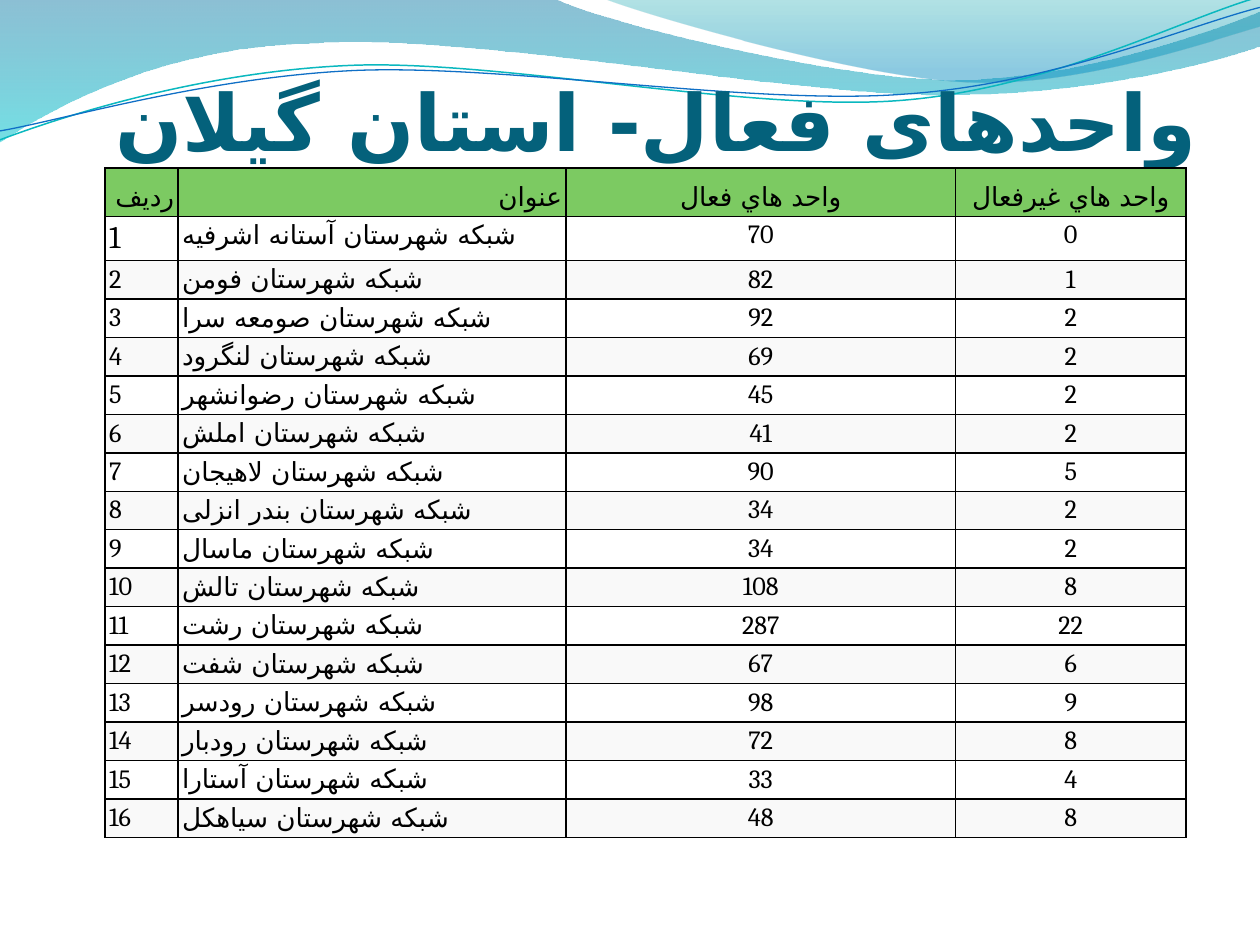
from dataclasses import dataclass

from lxml.etree import SubElement
from pptx import Presentation
from pptx.dml.color import RGBColor
from pptx.enum.text import MSO_ANCHOR, MSO_AUTO_SIZE, PP_ALIGN
from pptx.oxml.ns import qn
from pptx.util import Cm, Pt


@dataclass(frozen=True)
class Theme:
    title_font: str = "Calibri"
    table_font: str = "Cambria"
    persian_font: str = "DejaVu Sans"
    title_size: float = 45
    table_size: float = 15
    first_number_size: float = 18
    border_width: float = 1
    title: str = "04617B"
    text: str = "000000"
    header: str = "7CCA62"
    bands: tuple = ("FFFFFF", "F9F9F9")


THEME = Theme()
TITLE = "واحدهای فعال- استان گیلان"
HEADERS = ["ردیف", "عنوان", "واحد هاي فعال", "واحد هاي غيرفعال"]
NETWORK = "شبکه شهرستان"
COUNTIES = [
    ("آستانه اشرفیه", 70, 0),
    ("فومن", 82, 1),
    ("صومعه سرا", 92, 2),
    ("لنگرود", 69, 2),
    ("رضوانشهر", 45, 2),
    ("املش", 41, 2),
    ("لاهیجان", 90, 5),
    ("بندر انزلی", 34, 2),
    ("ماسال", 34, 2),
    ("تالش", 108, 8),
    ("رشت", 287, 22),
    ("شفت", 67, 6),
    ("رودسر", 98, 9),
    ("رودبار", 72, 8),
    ("آستارا", 33, 4),
    ("سیاهکل", 48, 8),
]
COLUMN_WIDTHS = [1.47, 7.82, 7.85, 4.65]
HEADER_HEIGHT, FIRST_HEIGHT, ROW_HEIGHT = 0.97, 0.88, 0.76
HEADER_ALIGN = [PP_ALIGN.RIGHT, PP_ALIGN.RIGHT, PP_ALIGN.CENTER, PP_ALIGN.CENTER]
BODY_ALIGN = [PP_ALIGN.LEFT, PP_ALIGN.LEFT, PP_ALIGN.CENTER, PP_ALIGN.CENTER]

WAVES = [
    ([(0, 0), (11.18, -0.03), (12.09, 0.43, 16.87, 1.6, 19.25, 1.6),
      (21.67, 1.6, 24.33, 0.66, 25.4, 0.23), (25.43, 0.91),
      (24.97, 1.12, 22.1, 1.93, 18.95, 1.91), (15.8, 1.91, 9.7, 0.71, 6.53, 0.86),
      (3.28, 0.91, 1.17, 2.11, -0.03, 2.87)],
     [(0, "0074A1", 45), (1, "00C6CF", 55)]),
    ([(12.17, -0.03), (12.93, 0.28, 17.32, 1.57, 19.53, 1.65),
      (21.74, 1.75, 24.41, 0.81, 25.4, 0.53), (25.4, 0)],
     [(0, "00A1A9", 30), (0.8, "008BBF", 45)]),
]
RIBBONS = [
    ([(0, 2.82), (1.22, 2.36, 4.01, 1.45, 7.04, 1.32),
      (10.03, 1.19, 15.06, 2.26, 18.11, 2.03), (21.16, 1.8, 23.83, 0.38, 25.35, -0.05)],
     "0AB8BF", 0.85),
    ([(0, 2.64), (1.19, 2.44, 4.17, 1.55, 7.19, 1.42),
      (10.24, 1.3, 15.16, 2.13, 18.21, 1.9), (21.23, 1.7, 23.9, 0.53, 25.4, 0.15)],
     "0F6FC6", 0.75),
]


def color(value):
    return RGBColor.from_string(value)


def draw_outline(page, segments, close):
    points = [(Cm(x), Cm(y)) for segment in segments
              for x, y in zip(segment[::2], segment[1::2])]
    builder = page.shapes.build_freeform(*points[0])
    builder.add_line_segments(points[1:], close=close)
    shape = builder.convert_to_shape()
    shape.shadow.inherit = False
    corners = iter(list(shape._element.iter(qn("a:lnTo"))))
    for segment in segments[1:]:
        corner = next(corners)
        if len(segment) == 6:
            corner.tag = qn("a:cubicBezTo")
            for extra in (next(corners), next(corners)):
                corner.append(extra[0])
                extra.getparent().remove(extra)
    return shape


def draw_wave(page, segments, stops):
    shape = draw_outline(page, segments, True)
    shape.line.fill.background()
    shape.fill.gradient()
    shape.fill.gradient_angle = 270
    for stop, (position, value, opacity) in zip(shape.fill.gradient_stops, stops):
        stop.position = position
        stop.color.rgb = color(value)
    for element, (position, value, opacity) in zip(shape._element.iter(qn("a:gs")), stops):
        SubElement(element[0], qn("a:alpha"), val=str(opacity * 1000))


def draw_ribbon(page, segments, value, width):
    shape = draw_outline(page, segments, False)
    shape.fill.background()
    shape.line.color.rgb = color(value)
    shape.line.width = Pt(width)


def format_paragraph(para, alignment, font, size, value):
    para.alignment = alignment
    para.font.name = font
    para.font.size = Pt(size)
    para.font.color.rgb = color(value)
    for span in para.runs:
        SubElement(span._r.get_or_add_rPr(), qn("a:cs"), typeface=THEME.persian_font)


def format_title(page):
    box = page.shapes.title
    page.shapes._spTree.append(box._element)
    box.left, box.top, box.width, box.height = Cm(1.27), Cm(1.96), Cm(22.86), Cm(1.42)
    frame = box.text_frame
    frame.text = TITLE
    frame.word_wrap = True
    frame.auto_size = MSO_AUTO_SIZE.NONE
    frame.vertical_anchor = MSO_ANCHOR.BOTTOM
    frame.margin_left = frame.margin_right = frame.margin_bottom = 0
    frame.margin_top = Cm(0.13)
    para = frame.paragraphs[0]
    para._p.get_or_add_pPr().set("rtl", "1")
    format_paragraph(para, PP_ALIGN.RIGHT, THEME.title_font, THEME.title_size, THEME.title)
    para.font.bold = True


def add_borders(cell):
    properties = cell._tc.get_or_add_tcPr()
    for index, side in enumerate(("lnL", "lnR", "lnT", "lnB")):
        line = SubElement(properties, qn(f"a:{side}"), w=str(Pt(THEME.border_width)))
        fill = SubElement(line, qn("a:solidFill"))
        SubElement(fill, qn("a:srgbClr"), val=THEME.text)
        properties.insert(index, line)


def format_cell(cell, text, alignment, anchor, fill, size):
    cell.text = text
    cell.vertical_anchor = anchor
    cell.margin_left = cell.margin_right = cell.margin_top = cell.margin_bottom = Cm(0.08)
    cell.fill.solid()
    cell.fill.fore_color.rgb = color(fill)
    add_borders(cell)
    format_paragraph(cell.text_frame.paragraphs[0], alignment, THEME.table_font, size, THEME.text)


def add_county_table(page):
    rows = [HEADERS] + [
        (str(number), f"{NETWORK} {name}", str(active), str(inactive))
        for number, (name, active, inactive) in enumerate(COUNTIES, 1)
    ]
    heights = [HEADER_HEIGHT, FIRST_HEIGHT] + [ROW_HEIGHT] * (len(rows) - 2)
    table = page.shapes.add_table(len(rows), len(HEADERS), Cm(2.12), Cm(3.39),
                                  Cm(sum(COLUMN_WIDTHS)), Cm(sum(heights))).table
    for column, width in zip(table.columns, COLUMN_WIDTHS):
        column.width = Cm(width)
    for row_index, (row, height) in enumerate(zip(rows, heights)):
        table.rows[row_index].height = Cm(height)
        header = row_index == 0
        fill = THEME.header if header else THEME.bands[(row_index - 1) % 2]
        anchor = MSO_ANCHOR.BOTTOM if header else MSO_ANCHOR.TOP
        alignments = HEADER_ALIGN if header else BODY_ALIGN
        for column_index, text in enumerate(row):
            first_number = (row_index, column_index) == (1, 0)
            size = THEME.first_number_size if first_number else THEME.table_size
            format_cell(table.cell(row_index, column_index), text,
                        alignments[column_index], anchor, fill, size)


def main():
    deck = Presentation()
    deck.slide_width, deck.slide_height = Cm(25.4), Cm(19.05)
    page = deck.slides.add_slide(deck.slide_layouts[5])
    for wave in WAVES:
        draw_wave(page, *wave)
    for ribbon in RIBBONS:
        draw_ribbon(page, *ribbon)
    format_title(page)
    add_county_table(page)
    deck.save("out.pptx")


if __name__ == "__main__":
    main()
